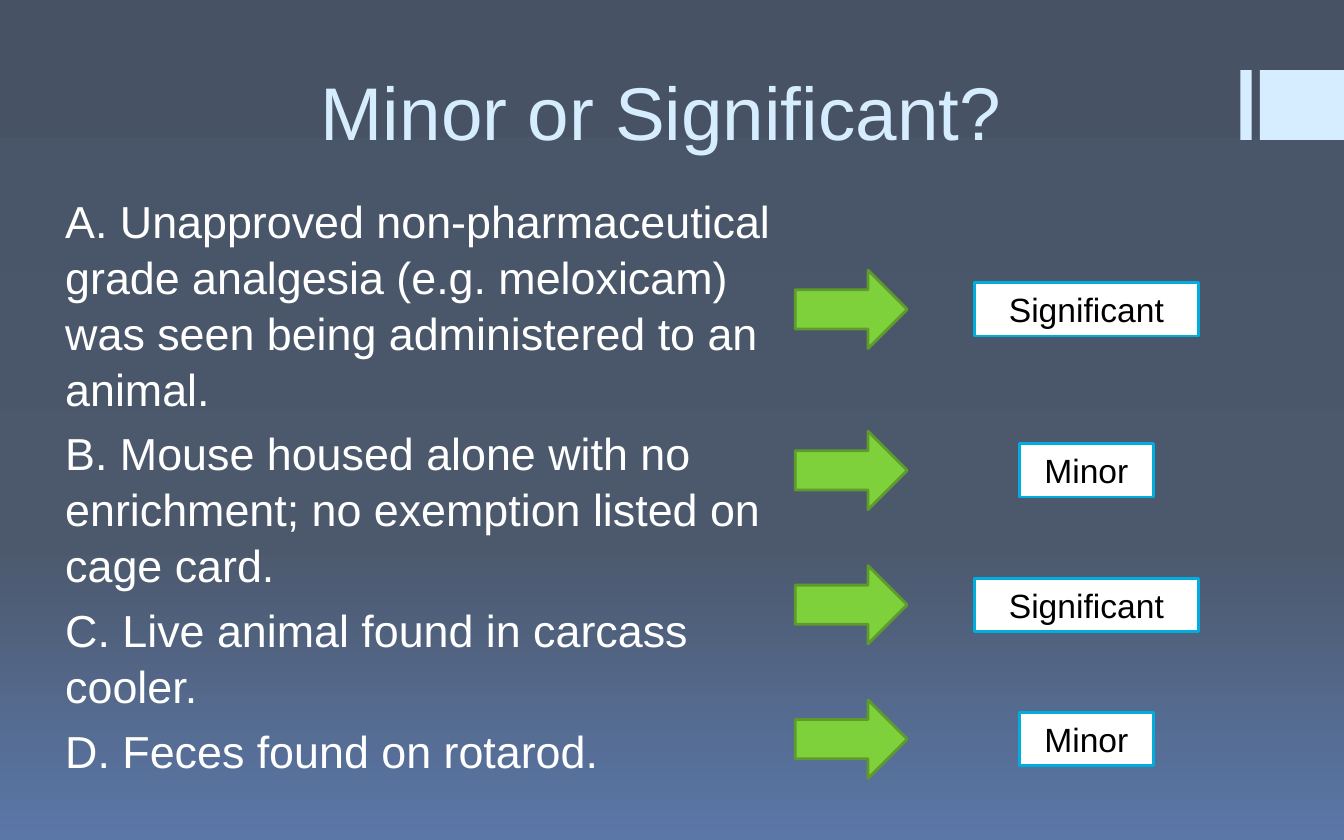
from copy import deepcopy

from lxml.etree import SubElement
from pptx import Presentation
from pptx.dml.color import RGBColor
from pptx.enum.shapes import MSO_SHAPE
from pptx.enum.text import MSO_ANCHOR, MSO_AUTO_SIZE, PP_ALIGN
from pptx.oxml.ns import qn
from pptx.util import Pt

PX = 9525  # EMU per px, 96 px to the inch

WHITE = RGBColor(0xFF, 0xFF, 0xFF)
BLACK = RGBColor(0x00, 0x00, 0x00)
PALE = RGBColor(0xD6, 0xEC, 0xFF)
BLUE = RGBColor(0x00, 0xAD, 0xDC)
GREEN = RGBColor(0x7F, 0xD1, 0x3B)
DARK_GREEN = RGBColor(0x5E, 0x9B, 0x2C)
BACKGROUND = [(0, RGBColor(0x47, 0x53, 0x65)),
              (0.65, RGBColor(0x4C, 0x59, 0x6D)),
              (1, RGBColor(0x5B, 0x77, 0xA8))]


def write(p, text, size=18, color=BLACK, align=PP_ALIGN.CENTER):
    p.alignment = align
    r = p.add_run()
    r.text = text
    r.font.name = "Arial"
    r.font.size = Pt(size)
    r.font.color.rgb = color


def add_block(kind, x, y, w, h, fill, line=None):
    sp = s.shapes.add_shape(kind, x * PX, y * PX, w * PX, h * PX)
    sp.shadow.inherit = False
    sp.fill.solid()
    sp.fill.fore_color.rgb = fill
    if line is None:
        sp.line.fill.background()
    else:
        sp.line.color.rgb = line
        sp.line.width = Pt(1.5)
    return sp


prs = Presentation()
prs.slide_width, prs.slide_height = 960 * PX, 600 * PX
s = prs.slides.add_slide(prs.slide_layouts[1])

# Background: vertical gradient with three stops
fill = s.background.fill
fill.gradient()
fill.gradient_angle = 270
stops = s._element.find(".//" + qn("a:gsLst"))
stops.append(deepcopy(stops[-1]))
for stop, (position, color) in zip(fill.gradient_stops, BACKGROUND):
    stop.position = position
    stop.color.rgb = color

# Bars at the right edge
for x, w in [(886, 8), (900, 60)]:
    add_block(MSO_SHAPE.RECTANGLE, x, 50, w, 50, PALE)

# Title
title = s.shapes.title
title.left, title.top, title.width, title.height = 88 * PX, 36 * PX, 768 * PX, 80 * PX
tf = title.text_frame
tf.auto_size = MSO_AUTO_SIZE.NONE
tf.vertical_anchor = MSO_ANCHOR.BOTTOM
write(tf.paragraphs[0], "Minor or Significant?", size=40, color=PALE)

# Cases
cases = [
    "A. Unapproved non-pharmaceutical grade analgesia (e.g. meloxicam) "
    "was seen being administered to an animal.",
    "B. Mouse housed alone with no enrichment; no exemption listed on cage card.",
    "C. Live animal found in carcass cooler.",
    "D. Feces found on rotarod.",
]
body = s.placeholders[1]
body.left, body.top, body.width, body.height = 32 * PX, 132 * PX, 528 * PX, 432 * PX
tf = body.text_frame
tf.auto_size = MSO_AUTO_SIZE.NONE
for i, case in enumerate(cases):
    p = tf.add_paragraph() if i else tf.paragraphs[0]
    write(p, case, size=24, color=WHITE, align=PP_ALIGN.LEFT)
    p.line_spacing = 1.04
    p.space_before = Pt(4.8)
    pPr = p._p.get_or_add_pPr()
    pPr.set("marL", str(5 * PX))
    pPr.set("indent", "0")
    SubElement(pPr, qn("a:buNone"))

# Arrows and answers, centred on one line per case
answers = [("Significant", 160, 221), ("Minor", 96, 336),
           ("Significant", 160, 432), ("Minor", 96, 528)]
for answer, w, middle in answers:
    add_block(MSO_SHAPE.RIGHT_ARROW, 568, middle - 28, 80, 56, GREEN, DARK_GREEN)
    box = add_block(MSO_SHAPE.RECTANGLE, 776 - w // 2, middle - 19, w, 38, WHITE, BLUE)
    write(box.text_frame.paragraphs[0], answer)

prs.save("out.pptx")
